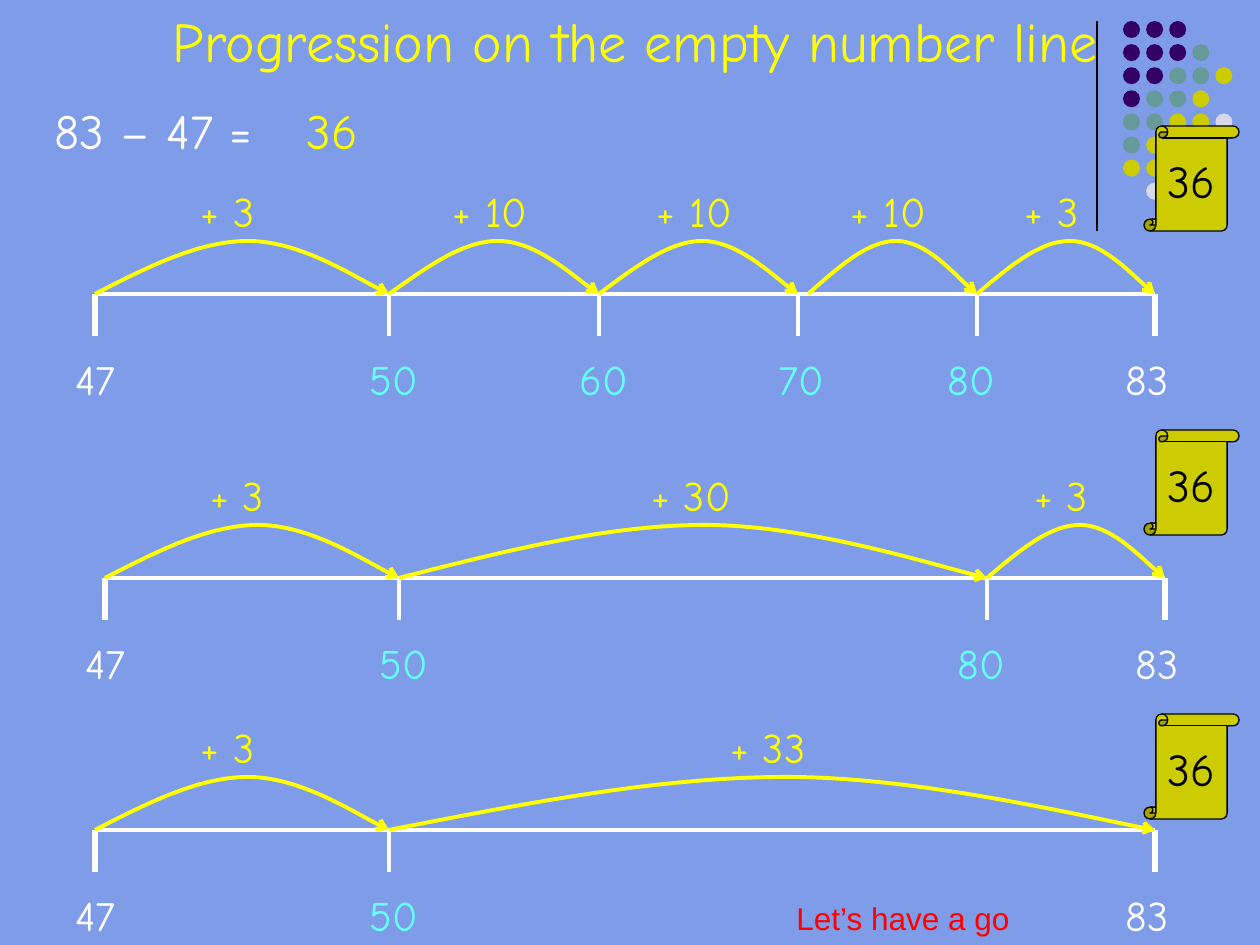
from lxml.etree import SubElement
from pptx import Presentation
from pptx.dml.color import RGBColor
from pptx.enum.shapes import MSO_CONNECTOR, MSO_SHAPE
from pptx.enum.text import MSO_ANCHOR, MSO_AUTO_SIZE, PP_ALIGN
from pptx.oxml.ns import qn
from pptx.util import Pt

SCALE = 914400 / 126
WHITE, YELLOW, CYAN, BLACK, RED = "FFFFFF", "FFFF00", "66FFFF", "000000", "FF0000"
BACKGROUND, SCROLL = "7E9CE8", "CCCC00"
HAND = "Comic Neue"

DOT_COLORS = {"p": "330066", "t": "669999", "o": "CCCC00", "l": "D8D8EC"}
DOT_ROWS = ["ppp", "pppt", "pptto", "ptto", "ttool", "tool", "ooll", ".l.l"]

TICK_X = {47: 0, 50: 294, 60: 504, 70: 703, 80: 882, 83: 1060}
ARC = [(0.175, 0.5), (0.35, 0), (0.52, 0), (0.69, 0), (0.925, 0.82), (1, 1)]
NUMBER_LINES = [
    (95, 294, [47, 50, 60, 70, 80, 83], {70: 10}),
    (105, 578, [47, 50, 80, 83], {}),
    (95, 830, [47, 50, 83], {}),
]
SCROLL_TOPS = [126, 430, 714]


def px(*values):
    return [round(v * SCALE) for v in values]


def rgb(value):
    return RGBColor.from_string(value)


def apply(obj, values):
    for name, value in values.items():
        setattr(obj, name, value)


def style(sp, fill=None, line=None, width=0.75):
    sp.shadow.inherit = False
    if fill:
        sp.fill.solid()
        sp.fill.fore_color.rgb = rgb(fill)
    else:
        sp.fill.background()
    if line:
        sp.line.color.rgb = rgb(line)
        sp.line.width = Pt(width)
    else:
        sp.line.fill.background()


def write(sp, text, size, color, font=HAND, align=PP_ALIGN.LEFT):
    tf = sp.text_frame
    apply(tf, {"word_wrap": True, "auto_size": MSO_AUTO_SIZE.SHAPE_TO_FIT_TEXT,
               "vertical_anchor": MSO_ANCHOR.TOP})
    p = tf.paragraphs[0]
    p.alignment = align
    r = p.add_run()
    r.text = text
    apply(r.font, {"name": font, "size": Pt(size)})
    r.font.color.rgb = rgb(color)


def add_text(shapes, box, text, size, color, font=HAND):
    write(shapes.add_textbox(*px(*box)), text, size, color, font)


def add_line(shapes, x1, y1, x2, y2, color, width):
    c = shapes.add_connector(MSO_CONNECTOR.STRAIGHT, *px(x1, y1, x2, y2))
    c.line.color.rgb = rgb(color)
    c.line.width = Pt(width)
    SubElement(c._element.spPr, qn("a:effectLst"))


def add_jump(shapes, x, y, w, h):
    builder = shapes.build_freeform(x, y + h, scale=SCALE)
    builder.add_line_segments([(x + u * w, y + v * h) for u, v in ARC], close=False)
    sp = builder.convert_to_shape()
    segments = list(sp._element.iter(qn("a:lnTo")))
    for i in range(0, len(segments), 3):
        curve = segments[i]
        parent = curve.getparent()
        bezier = SubElement(parent, qn("a:cubicBezTo"))
        for segment in segments[i:i + 3]:
            bezier.append(segment[0])
            parent.remove(segment)
    style(sp, line=YELLOW, width=2.25)
    SubElement(sp.line._get_or_add_ln(), qn("a:tailEnd"), type="arrow")


def add_title(s, x, y, w, h):
    sp = s.shapes.title
    apply(sp, dict(zip(("left", "top", "width", "height"), px(x, y, w, h))))
    write(sp, "Progression on the empty number line", 32, YELLOW, align=PP_ALIGN.CENTER)


def add_ornament(s, x, y, h):
    add_line(s.shapes, x, y, x, y + h, BLACK, 0.75)
    dots = s.shapes.add_group_shape().shapes
    for row, keys in enumerate(DOT_ROWS):
        for col, key in enumerate(keys):
            if key in DOT_COLORS:
                box = px(x + 26 + 23.1 * col, y + 23.1 * row, 17, 17)
                style(dots.add_shape(MSO_SHAPE.OVAL, *box), DOT_COLORS[key])


def add_equation(s, x, y):
    add_text(s.shapes, (x, y, 294, 72), "83 – 47 =", 28, WHITE)
    add_text(s.shapes, (x + 252, y, 105, 72), "36", 28, YELLOW)


def add_number_line(s, x, y, ticks, start_gaps):
    ends = ticks[0], ticks[-1]
    add_line(s.shapes, x, y, x + TICK_X[ends[1]], y, WHITE, 2.25)
    for n in ticks:
        tick = x + TICK_X[n]
        add_line(s.shapes, tick, y, tick, y + 42, WHITE, 3 if n in ends else 2.25)
        label = tick - (42 if n >= 80 else 32)
        add_text(s.shapes, (label, y + 53, 95, 63), str(n), 24, WHITE if n in ends else CYAN)
    for a, b in zip(ticks, ticks[1:]):
        start = x + TICK_X[a] + start_gaps.get(a, 0)
        w = x + TICK_X[b] - start
        add_jump(s.shapes, start, y - 53, w, 53)
        add_text(s.shapes, (start + w / 2 - 54, y - 115, 116, 63), f"+ {b - a}", 24, YELLOW)


def add_scroll(s, x, y, w, h):
    shapes = s.shapes.add_group_shape().shapes
    sp = shapes.add_shape(MSO_SHAPE.VERTICAL_SCROLL, *px(x, y, w, h))
    style(sp, SCROLL, BLACK)
    add_text(shapes, (x + 11, y + 21, 105, 67), "36", 26, BLACK)


def main():
    prs = Presentation()
    prs.slide_width, prs.slide_height = px(1260, 945)
    s = prs.slides.add_slide(prs.slide_layouts[5])
    s.background.fill.solid()
    s.background.fill.fore_color.rgb = rgb(BACKGROUND)
    add_ornament(s, 1097, 21, 210)
    add_title(s, 21, 0, 1229, 79)
    add_equation(s, 42, 94)
    for number_line in NUMBER_LINES:
        add_number_line(s, *number_line)
    for top in SCROLL_TOPS:
        add_scroll(s, 1144, top, 95, 105)
    add_text(s.shapes, (784, 893, 377, 50), "Let’s have a go", 18, RED, "Arial")
    prs.save("out.pptx")


if __name__ == "__main__":
    main()
